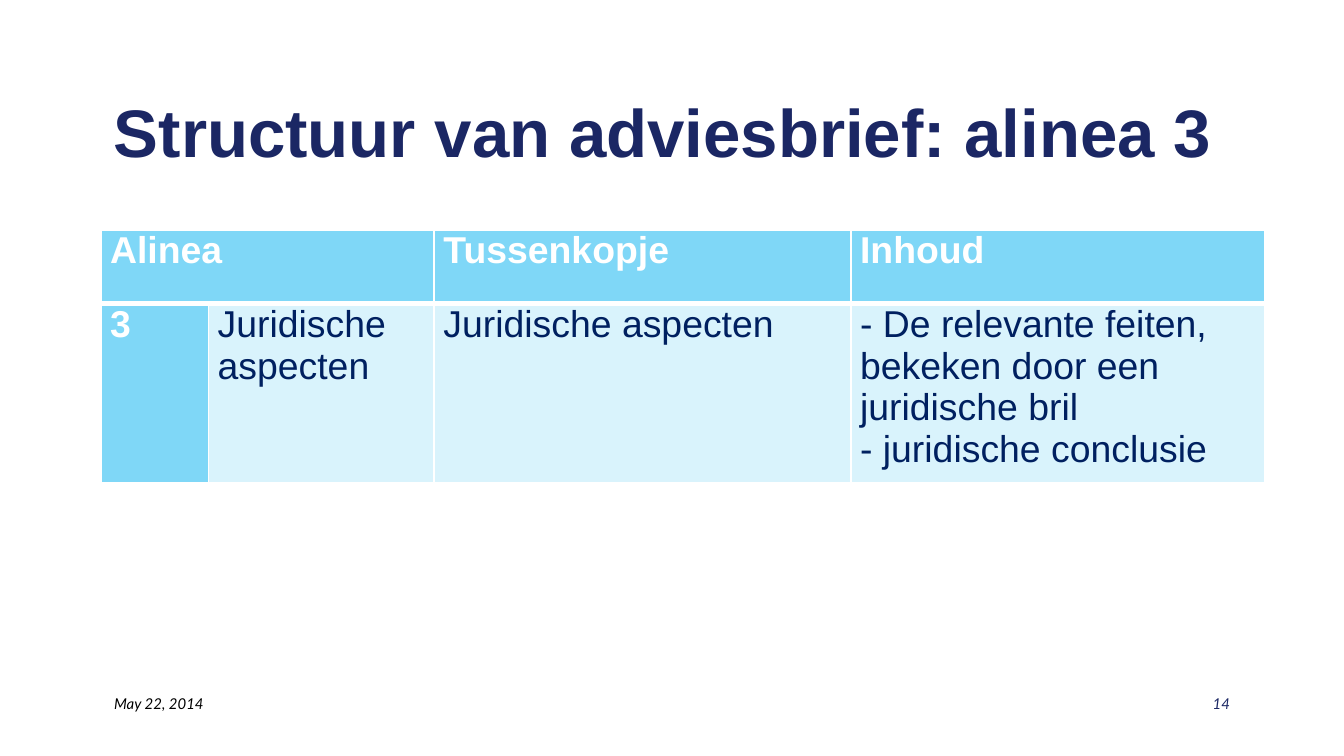
from dataclasses import dataclass

from lxml.etree import SubElement
from pptx import Presentation
from pptx.dml.color import RGBColor
from pptx.enum.text import MSO_ANCHOR, PP_ALIGN
from pptx.oxml.ns import qn
from pptx.util import Inches, Pt


@dataclass(frozen=True)
class Theme:
    navy: str = "1B2764"
    body: str = "002060"
    accent: str = "00B0F0"
    white: str = "FFFFFF"
    black: str = "000000"
    font: str = "Arial"
    footer_font: str = "Lato"
    title_size: int = 36
    table_size: int = 20
    footer_size: int = 8
    strong: int = 50
    light: int = 15


def write(tf, text, *, size, color, font, bold=False, italic=False,
          align=PP_ALIGN.LEFT):
    """Fill the first paragraph; a newline becomes a line break."""
    p = tf.paragraphs[0]
    p.alignment = align
    for i, line in enumerate(text.split("\n")):
        if i:
            p.add_line_break()
        r = p.add_run()
        r.text = line
        r.font.size = Pt(size)
        r.font.name = font
        r.font.bold = bold
        r.font.italic = italic
        r.font.color.rgb = RGBColor.from_string(color)


def add_solid(parent, color):
    fill = SubElement(parent, qn("a:solidFill"))
    return SubElement(fill, qn("a:srgbClr"), val=color)


class SlideBuilder:
    def __init__(self, s, theme):
        self.s = s
        self.theme = theme

    def text(self, text, x, y, w, h, anchor=MSO_ANCHOR.TOP, **style):
        sp = self.s.shapes.add_textbox(Inches(x), Inches(y), Inches(w), Inches(h))
        tf = sp.text_frame
        tf.word_wrap = True
        tf.vertical_anchor = anchor
        write(tf, text, **style)

    def footer(self, text, x, color, align=PP_ALIGN.LEFT):
        t = self.theme
        self.text(text, x, 5.12, 2.08, 0.38, size=t.footer_size, color=color,
                  font=t.footer_font, italic=True, align=align)

    def cell(self, cell, text, is_header, is_label):
        """Format one cell; body borders come from the table style."""
        t = self.theme
        cell.margin_left = cell.margin_right = Inches(0.07)
        cell.margin_top = cell.margin_bottom = 0
        strong = is_header or is_label
        if text:
            write(cell.text_frame, text, size=t.table_size, font=t.font,
                  bold=strong, color=t.white if strong else t.body)
        tc_pr = cell._tc.get_or_add_tcPr()
        if is_header:
            for side, width in zip("LRTB", (1, 1, 1, 3)):
                ln = SubElement(tc_pr, qn(f"a:ln{side}"), w=str(Pt(width)))
                add_solid(ln, t.white)
        alpha = t.strong if strong else t.light
        SubElement(add_solid(tc_pr, t.accent), qn("a:alpha"), val=str(alpha * 1000))

    def table(self, rows, x, y, h, widths, heights):
        frame = self.s.shapes.add_table(len(rows), len(widths), Inches(x), Inches(y),
                                        Inches(sum(widths)), Inches(h))
        table = frame.table
        table.first_col = True
        for column, width in zip(table.columns, widths):
            column.width = Inches(width)
        for row, height in zip(table.rows, heights):
            row.height = Inches(height)
        frame.height = Inches(h)
        for i, row in enumerate(rows):
            for j, text in enumerate(row):
                self.cell(table.cell(i, j), text, i == 0, i > 0 and j == 0)
        table.cell(0, 0).merge(table.cell(0, 1))


def main():
    prs = Presentation()
    prs.slide_width = Inches(10)
    prs.slide_height = prs.slide_width * 9 // 16
    theme = Theme()
    slide = SlideBuilder(prs.slides.add_slide(prs.slide_layouts[6]), theme)

    slide.text("Structuur van adviesbrief: alinea 3", 0.75, 0.5, 8.5, 0.94,
               anchor=MSO_ANCHOR.MIDDLE, size=theme.title_size, color=theme.navy,
               font=theme.font, bold=True)
    slide.table(
        [["Alinea", "", "Tussenkopje", "Inhoud"],
         ["3", "Juridische aspecten", "Juridische aspecten",
          "- De relevante feiten, bekeken door een juridische bril \n"
          "- juridische conclusie"]],
        x=0.75, y=1.71, h=2, widths=[0.8, 1.68, 3.1, 3.08], heights=[0.55, 0.98])
    slide.footer("May 22, 2014", 0.75, theme.black)
    slide.footer("14", 7.17, theme.navy, align=PP_ALIGN.RIGHT)
    prs.save("out.pptx")


if __name__ == "__main__":
    main()
